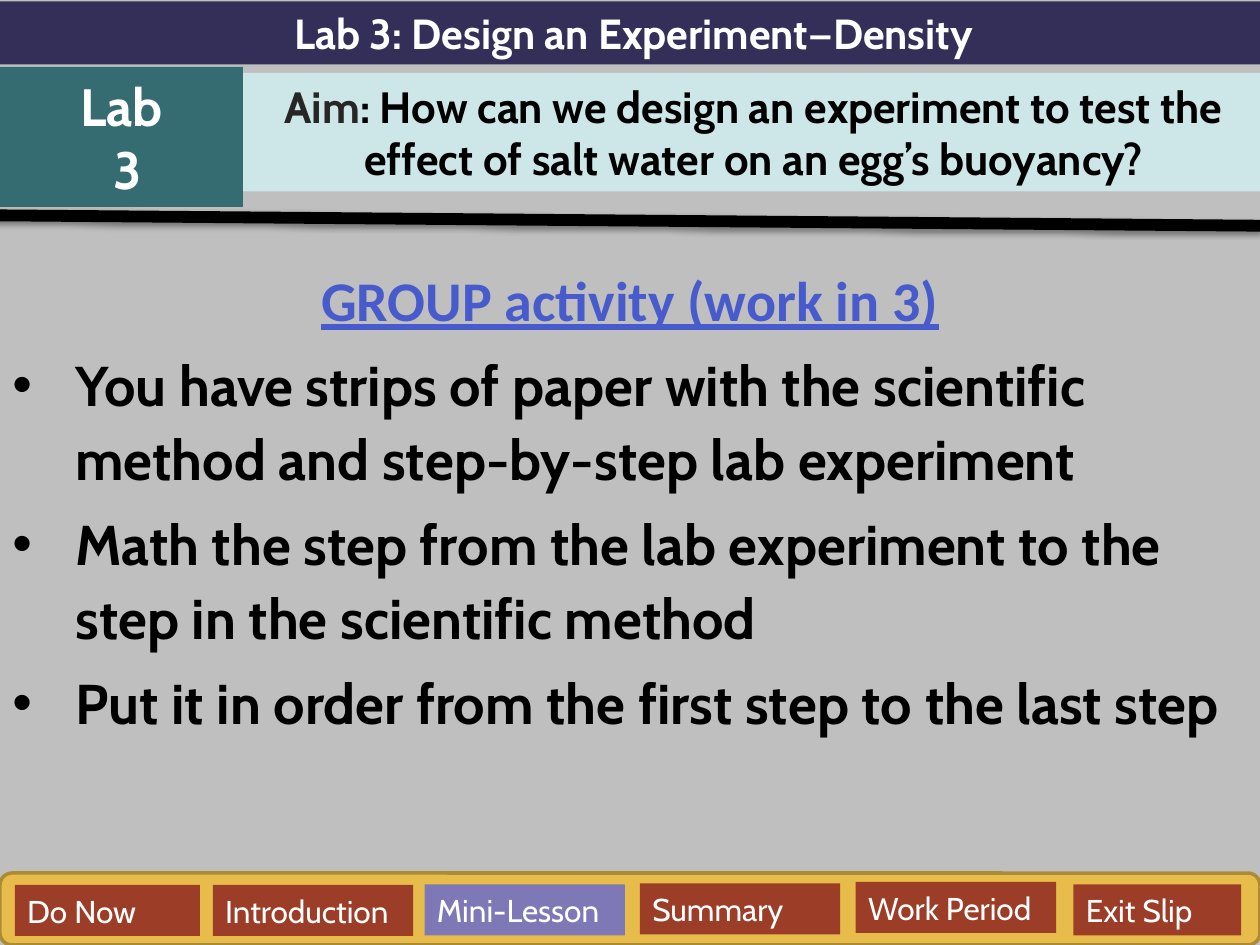
from lxml.etree import SubElement
from pptx import Presentation
from pptx.dml.color import RGBColor
from pptx.enum.shapes import MSO_CONNECTOR, MSO_SHAPE
from pptx.enum.text import MSO_ANCHOR, MSO_AUTO_SIZE, PP_ALIGN
from pptx.oxml.ns import qn
from pptx.util import Cm, Pt

# Content
TITLE = "Lab 3: Design an Experiment—Density"
LAB = "Lab\n 3"
AIM = ("Aim", ": How can we design an experiment to test the "
       "effect of salt water on an egg’s buoyancy?")
ACTIVITY = "GROUP activity (work in 3)"
STEPS = [
    "You have strips of paper with the scientific method and step-by-step lab experiment",
    "Math the step from the lab experiment to the step in the scientific method",
    "Put it in order from the first step to the last step",
]
# Label, left, top, width in cm
TABS = [
    ("Do Now", 0.3, 17.84, 3.73),
    ("Introduction", 4.29, 17.84, 4.04),
    ("Mini-Lesson", 8.56, 17.83, 4.04),
    ("Summary", 12.9, 17.81, 4.04),
    ("Work Period", 17.25, 17.78, 4.04),
    ("Exit Slip", 21.64, 17.83, 3.38),
]
CURRENT_TAB = "Mini-Lesson"
TAB_HEIGHT = 1.03

WHITE, BLACK = "FFFFFF", "000000"


def color(hex_code):
    return RGBColor.from_string(hex_code)


def place(shape, left, top, width, height):
    shape.left, shape.top = Cm(left), Cm(top)
    shape.width, shape.height = Cm(width), Cm(height)


def format_run(run, size, hex_code, bold=True, font="Cabin"):
    run.font.name, run.font.size, run.font.bold = font, Pt(size), bold
    run.font.color.rgb = color(hex_code)


def format_text(shape, size, hex_code, align=PP_ALIGN.CENTER, bold=True):
    frame = shape.text_frame
    frame.word_wrap = True
    frame.vertical_anchor = MSO_ANCHOR.MIDDLE
    for paragraph in frame.paragraphs:
        paragraph.alignment = align
        for run in paragraph.runs:
            format_run(run, size, hex_code, bold)


def add_block(slide, box, fill, text="", kind=MSO_SHAPE.RECTANGLE):
    block = slide.shapes.add_shape(kind, *map(Cm, box))
    block.shadow.inherit = False
    block.fill.solid()
    block.fill.fore_color.rgb = color(fill)
    block.line.fill.background()
    block.text_frame.text = text
    return block


def add_bullet(paragraph, indent):
    properties = paragraph._p.get_or_add_pPr()
    properties.set("marL", str(indent))
    properties.set("indent", str(-indent))
    SubElement(properties, qn("a:buFont"), typeface="Arial")
    SubElement(properties, qn("a:buChar"), char="•")


def add_shadow(connector):
    effects = SubElement(connector._element.spPr, qn("a:effectLst"))
    shadow = SubElement(effects, qn("a:outerShdw"), blurRad=str(Pt(3.1)),
                        dist=str(Pt(1.6)), dir="5400000", rotWithShape="0")
    tint = SubElement(shadow, qn("a:srgbClr"), val=BLACK)
    SubElement(tint, qn("a:alpha"), val="38000")


def add_header(slide):
    title = slide.shapes.title
    place(title, 0, 0.03, 25.55, 1.27)
    title.fill.solid()
    title.fill.fore_color.rgb = color("342F59")
    title.text_frame.text = TITLE
    title.text_frame.auto_size = MSO_AUTO_SIZE.NONE
    format_text(title, 24, WHITE)

    lab = add_block(slide, (0, 1.35, 4.9, 2.82), "346C71", LAB)
    format_text(lab, 30, WHITE)

    aim = add_block(slide, (4.9, 1.47, 20.57, 2.39), "CDE6E8", AIM[0])
    aim.text_frame.paragraphs[0].add_run().text = AIM[1]
    format_text(aim, 25, BLACK)
    aim.text_frame.paragraphs[0].runs[0].font.color.rgb = color("262626")

    rule = slide.shapes.add_connector(
        MSO_CONNECTOR.STRAIGHT, Cm(-0.13), Cm(4.34), Cm(25.4), Cm(4.55))
    rule.line.color.rgb = color(BLACK)
    rule.line.width = Pt(6.75)
    add_shadow(rule)


def add_activity(slide):
    body = slide.shapes.add_textbox(Cm(0), Cm(4.55), Cm(25.4), Cm(13.08))
    frame = body.text_frame
    frame.word_wrap = True
    frame.text = "\n".join([ACTIVITY, *STEPS])
    heading, *steps = frame.paragraphs
    for paragraph in frame.paragraphs:
        paragraph.space_before = Pt(6.4)

    heading.alignment = PP_ALIGN.CENTER
    heading.line_spacing = 1.5
    format_run(heading.runs[0], 32, "475BCD", font="Calibri")
    heading.runs[0].font.underline = True

    for step in steps:
        step.line_spacing = 1.1
        add_bullet(step, Cm(1.27))
        format_run(step.runs[0], 32, BLACK)


def add_tabs(slide):
    bar = add_block(slide, (0, 17.6, 25.4, 1.45), "E8BC4A",
                    kind=MSO_SHAPE.ROUNDED_RECTANGLE)
    bar.line.color.rgb = color("AC8B37")
    bar.line.width = Pt(2)
    for label, left, top, width in TABS:
        fill = "7E78B7" if label == CURRENT_TAB else "9C3D28"
        tab = add_block(slide, (left, top, width, TAB_HEIGHT), fill, label)
        format_text(tab, 18, WHITE, PP_ALIGN.LEFT, bold=False)


def main():
    deck = Presentation()
    deck.slide_width, deck.slide_height = Cm(25.4), Cm(19.05)
    slide = deck.slides.add_slide(deck.slide_layouts.get_by_name("Title Only"))
    slide.background.fill.solid()
    slide.background.fill.fore_color.rgb = color("BFBFBF")
    add_header(slide)
    add_activity(slide)
    add_tabs(slide)
    deck.save("out.pptx")


if __name__ == "__main__":
    main()
